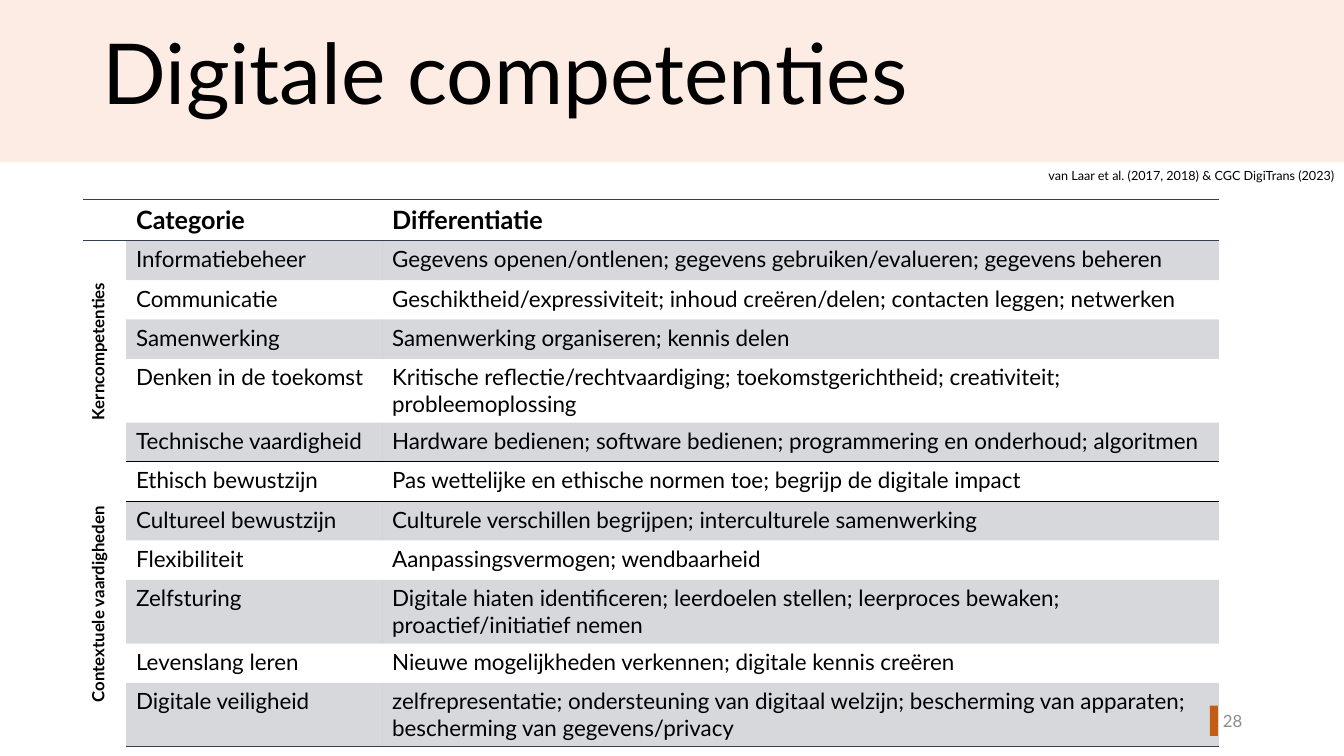
from lxml.etree import SubElement
from pptx import Presentation
from pptx.dml.color import RGBColor
from pptx.enum.shapes import MSO_SHAPE
from pptx.enum.text import MSO_ANCHOR, MSO_AUTO_SIZE, PP_ALIGN
from pptx.oxml import parse_xml
from pptx.oxml.ns import nsdecls, qn
from pptx.util import Inches, Pt

BLACK = RGBColor(0x00, 0x00, 0x00)
WHITE = RGBColor(0xFF, 0xFF, 0xFF)
PEACH = RGBColor(0xFD, 0xEC, 0xE3)
ORANGE = RGBColor(0xE8, 0x65, 0x07)
GREY = RGBColor(0x8C, 0x8C, 0x8C)
NAVY = RGBColor(0x33, 0x3F, 0x50)
FONT = "Lato"
NO_STYLE_NO_GRID = "{2D5ABB26-0587-4C30-8999-92F81FD0307C}"

HEADINGS = ("Categorie", "Differentiatie")
GROUPS = {
    "Kerncompetenties": [
        ("Informatiebeheer", "Gegevens openen/ontlenen; gegevens gebruiken/evalueren; gegevens beheren"),
        ("Communicatie", "Geschiktheid/expressiviteit; inhoud creëren/delen; contacten leggen; netwerken"),
        ("Samenwerking", "Samenwerking organiseren; kennis delen"),
        ("Denken in de toekomst", "Kritische reflectie/rechtvaardiging; toekomstgerichtheid; creativiteit; "
                                  "probleemoplossing"),
        ("Technische vaardigheid", "Hardware bedienen; software bedienen; programmering en onderhoud; algoritmen"),
    ],
    "Contextuele vaardigheden": [
        ("Ethisch bewustzijn", "Pas wettelijke en ethische normen toe; begrijp de digitale impact"),
        ("Cultureel bewustzijn", "Culturele verschillen begrijpen; interculturele samenwerking"),
        ("Flexibiliteit", "Aanpassingsvermogen; wendbaarheid"),
        ("Zelfsturing", "Digitale hiaten identificeren; leerdoelen stellen; leerproces bewaken; "
                        "proactief/initiatief nemen"),
        ("Levenslang leren", "Nieuwe mogelijkheden verkennen; digitale kennis creëren"),
        ("Digitale veiligheid", "zelfrepresentatie; ondersteuning van digitaal welzijn; bescherming van "
                                "apparaten; bescherming van gegevens/privacy"),
    ],
}
COLUMN_WIDTHS = (0.43, 2.54, 8.3)
HEADER_HEIGHT, ROW_HEIGHT = 0.41, 0.39


def write(frame, text, size, color=BLACK, bold=False, align=PP_ALIGN.LEFT):
    paragraph = frame.paragraphs[0]
    paragraph.alignment = align
    run = paragraph.add_run()
    run.text = text
    for attribute, value in {"name": FONT, "size": Pt(size), "bold": bold}.items():
        setattr(run.font, attribute, value)
    run.font.color.rgb = color
    return paragraph


def add_bar(slide, box, color):
    bar = slide.shapes.add_shape(MSO_SHAPE.RECTANGLE, *map(Inches, box))
    bar.shadow.inherit = False
    bar.fill.solid()
    bar.fill.fore_color.rgb = color
    bar.line.fill.background()
    return bar


def add_label(slide, box, text, size, **style):
    frame = slide.shapes.add_textbox(*map(Inches, box)).text_frame
    frame.word_wrap = True
    frame.vertical_anchor = MSO_ANCHOR.MIDDLE
    write(frame, text, size, **style)


def set_title(slide, text):
    title = slide.shapes.title
    title.left, title.top, title.width, title.height = map(Inches, (0.92, 0.34, 10.85, 0.85))
    title.text_frame.auto_size = MSO_AUTO_SIZE.NONE
    title.text_frame.vertical_anchor = MSO_ANCHOR.MIDDLE
    write(title.text_frame, text, 60).line_spacing = 0.9


def fill_cell(cell, color, opacity=100):
    cell.fill.solid()
    cell.fill.fore_color.rgb = color
    if opacity < 100:
        color_xml = cell._tc.tcPr.find(".//" + qn("a:srgbClr"))
        SubElement(color_xml, qn("a:alpha"), val=str(opacity * 1000))


def rule_row(table, row, sides, color, first_column=0):
    """Draw 1 pt lines along the given sides of a row, T before B."""
    for column in range(first_column, len(COLUMN_WIDTHS)):
        properties = table.cell(row, column)._tc.get_or_add_tcPr()
        for index, side in enumerate(sides):
            properties.insert(index, parse_xml(
                f'<a:ln{side} {nsdecls("a")} w="12700"><a:solidFill>'
                f'<a:srgbClr val="{color}"/></a:solidFill></a:ln{side}>'))


def add_group(table, first_row, name, competences):
    last_row = first_row + len(competences) - 1
    group = table.cell(first_row, 0)
    group.merge(table.cell(last_row, 0))
    write(group.text_frame, name, 12, bold=True, align=PP_ALIGN.CENTER)
    fill_cell(group, WHITE)
    group._tc.tcPr.set("vert", "vert270")
    for row, competence in enumerate(competences, first_row):
        for column, text in enumerate(competence, 1):
            cell = table.cell(row, column)
            write(cell.text_frame, text, 16)
            if row % 2:
                fill_cell(cell, NAVY, opacity=20)
    return last_row


def add_competence_table(slide):
    row_count = 1 + sum(map(len, GROUPS.values()))
    heights = [HEADER_HEIGHT] + [ROW_HEIGHT] * (row_count - 1)
    box = (0.82, 1.98, sum(COLUMN_WIDTHS), sum(heights))
    table = slide.shapes.add_table(row_count, len(COLUMN_WIDTHS), *map(Inches, box)).table
    table._tbl.tblPr.find(qn("a:tableStyleId")).text = NO_STYLE_NO_GRID
    for column, width in zip(table.columns, COLUMN_WIDTHS):
        column.width = Inches(width)
    for row, height in zip(table.rows, heights):
        row.height = Inches(height)

    for column, heading in enumerate(HEADINGS, 1):
        write(table.cell(0, column).text_frame, heading, 18, bold=True)
    last_row = 0
    group_ends = []
    for name, competences in GROUPS.items():
        last_row = add_group(table, last_row + 1, name, competences)
        group_ends.append(last_row)

    core_end = group_ends[0]
    rule_row(table, 0, "TB", NAVY)
    rule_row(table, core_end, "B", BLACK, first_column=1)
    rule_row(table, core_end + 1, "TB", BLACK, first_column=1)
    rule_row(table, last_row, "B", NAVY)


def main():
    presentation = Presentation()
    presentation.slide_width = Inches(13.33)
    presentation.slide_height = Inches(7.5)
    slide = presentation.slides.add_slide(presentation.slide_layouts[5])

    set_title(slide, "Digitale competenties")
    band = add_bar(slide, (0, 0, 13.33, 1.61), PEACH)
    slide.shapes.title._element.addprevious(band._element)
    add_bar(slide, (12, 7, 0.08, 0.3), ORANGE)
    add_label(slide, (11.77, 6.95, 0.65, 0.4), "28", 12, color=GREY, align=PP_ALIGN.RIGHT)
    add_competence_table(slide)
    add_label(slide, (10.3, 1.62, 3.25, 0.25), "van Laar et al. (2017, 2018) & CGC DigiTrans (2023)", 9)
    presentation.save("out.pptx")


if __name__ == "__main__":
    main()
